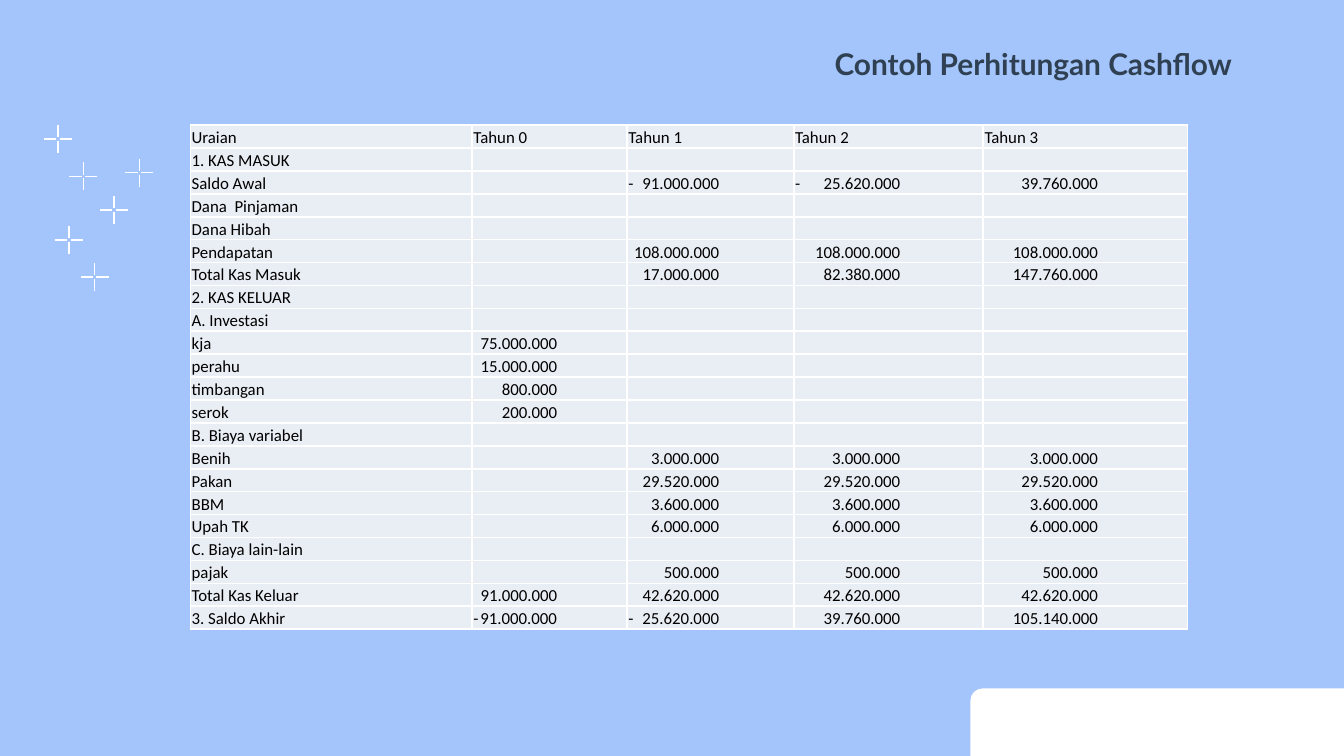
from lxml.etree import SubElement
from pptx import Presentation
from pptx.dml.color import RGBColor
from pptx.enum.text import MSO_ANCHOR as Anchor, PP_ALIGN as Align
from pptx.oxml.ns import qn
from pptx.util import Pt

COLORS = {"sky": "A4C5FB", "white": "FFFFFF", "title": "2F4052",
          "cell": "E9EDF4", "text": "000000"}

# Content
TITLE = "Contoh Perhitungan Cashflow"
HEADINGS = ("Uraian", "Tahun 0", "Tahun 1", "Tahun 2", "Tahun 3")
# A tab splits the minus sign at the left from the amount at the right.
CASHFLOW = [
    ("1. KAS MASUK", "", "", "", ""),
    ("Saldo Awal", "", "-\t91.000.000", "-\t25.620.000", "39.760.000"),
    ("Dana  Pinjaman", "", "", "", ""),
    ("Dana Hibah", "", "", "", ""),
    ("Pendapatan", "", "108.000.000", "108.000.000", "108.000.000"),
    ("Total Kas Masuk", "", "17.000.000", "82.380.000", "147.760.000"),
    ("2. KAS KELUAR", "", "", "", ""),
    ("A. Investasi", "", "", "", ""),
    ("kja", "75.000.000", "", "", ""),
    ("perahu", "15.000.000", "", "", ""),
    ("timbangan", "800.000", "", "", ""),
    ("serok", "200.000", "", "", ""),
    ("B. Biaya variabel", "", "", "", ""),
    ("Benih", "", "3.000.000", "3.000.000", "3.000.000"),
    ("Pakan", "", "29.520.000", "29.520.000", "29.520.000"),
    ("BBM", "", "3.600.000", "3.600.000", "3.600.000"),
    ("Upah TK", "", "6.000.000", "6.000.000", "6.000.000"),
    ("C. Biaya lain-lain", "", "", "", ""),
    ("pajak", "", "500.000", "500.000", "500.000"),
    ("Total Kas Keluar", "91.000.000", "42.620.000", "42.620.000", "42.620.000"),
    ("3. Saldo Akhir", "-\t91.000.000", "-\t25.620.000", "39.760.000", "105.140.000"),
]

# Layout, in points
SLIDE_W, SLIDE_H = 720, 405
TABLE_LEFT, TABLE_TOP, ROW_H = 102, 67, 12.3
COLUMN_WIDTHS = (151, 83, 89.3, 101.5, 109.4)
AMOUNT_GAPS = (0, 37.5, 40, 44.5, 48)  # space right of the amounts
CELL_INSET = 0.7
SPARKLES = [(29.5, 121), (43.2, 141), (67.2, 85), (53.5, 105), (23.5, 67), (37.2, 87)]
SPARKLE_SIZE, SPARKLE_ARM = 15, 6.5
PANEL_EDGE = [(720, 368.8), (526.5, 368.8), (524, 369.3), (521.8, 370.7),
              (520.4, 372.8), (519.9, 375.2), (519.9, 405), (720, 405)]


def color(name):
    return RGBColor.from_string(COLORS[name])


def points(pairs):
    return [(Pt(x), Pt(y)) for x, y in pairs]


def style(paragraph, font_name, size, color_name, bold=False):
    for run in paragraph.runs:
        run.font.name, run.font.size, run.font.bold = font_name, Pt(size), bold
        run.font.color.rgb = color(color_name)


def add_sparkle(left, top):
    middle, far = SPARKLE_SIZE / 2, SPARKLE_SIZE - SPARKLE_ARM
    spans = [(0, SPARKLE_ARM), (far, SPARKLE_SIZE)]
    arms = [((middle, a), (middle, b)) for a, b in spans]
    arms += [((a, middle), (b, middle)) for a, b in spans]
    arms = [points((left + x, top + y) for x, y in arm) for arm in arms]
    builder = slide.shapes.build_freeform(*arms[0][0])
    for start, end in arms:
        builder.move_to(*start)
        builder.add_line_segments([end], close=False)
    sparkle = builder.convert_to_shape()
    sparkle.shadow.inherit = False
    sparkle.fill.background()
    sparkle.line.color.rgb = color("white")
    sparkle.line.width = Pt(0.85)


def add_borders(cell):
    for side in ("a:lnL", "a:lnR", "a:lnT", "a:lnB"):
        border = SubElement(cell._tc.get_or_add_tcPr(), qn(side), w=str(Pt(1)))
        fill = SubElement(border, qn("a:solidFill"))
        SubElement(fill, qn("a:srgbClr"), val=COLORS["white"])


def fill_cell(cell, text, column, is_amount):
    add_borders(cell)
    cell.fill.solid()
    cell.fill.fore_color.rgb = color("cell")
    cell.vertical_anchor = Anchor.BOTTOM
    cell.margin_left = cell.margin_right = cell.margin_top = Pt(CELL_INSET)
    cell.margin_bottom = 0
    paragraph = cell.text_frame.paragraphs[0]
    if not text:
        SubElement(paragraph._p, qn("a:endParaRPr"), sz="900")
        return
    paragraph.text = text
    if "\t" in text:
        stop = COLUMN_WIDTHS[column] - AMOUNT_GAPS[column] - CELL_INSET
        tabs = SubElement(paragraph._p.get_or_add_pPr(), qn("a:tabLst"))
        SubElement(tabs, qn("a:tab"), pos=str(Pt(stop)), algn="r")
    elif is_amount:
        paragraph.alignment = Align.RIGHT
        cell.margin_right = Pt(AMOUNT_GAPS[column])
    style(paragraph, "Calibri", 9, "text")


prs = Presentation()
prs.slide_width, prs.slide_height = Pt(SLIDE_W), Pt(SLIDE_H)
slide = prs.slides.add_slide(prs.slide_layouts[6])

# Background, sparkles and corner panel
slide.background.fill.solid()
slide.background.fill.fore_color.rgb = color("sky")
for left, top in SPARKLES:
    add_sparkle(left, top)

edge = points(PANEL_EDGE)
outline = slide.shapes.build_freeform(*edge[0])
outline.add_line_segments(edge[1:], close=True)
panel = outline.convert_to_shape()
panel.shadow.inherit = False
panel.fill.solid()
panel.fill.fore_color.rgb = color("white")
panel.line.fill.background()

# Title
title = slide.shapes.add_textbox(Pt(447.1), Pt(22.3), Pt(217), Pt(21)).text_frame
title.word_wrap = True
title.margin_left = title.margin_right = title.margin_bottom = 0
title.margin_top = Pt(2)
title.text = TITLE
style(title.paragraphs[0], "Lato", 16, "title", bold=True)

# Cashflow table
rows = [HEADINGS] + CASHFLOW
table = slide.shapes.add_table(
    len(rows), len(HEADINGS), Pt(TABLE_LEFT), Pt(TABLE_TOP),
    Pt(sum(COLUMN_WIDTHS)), Pt(ROW_H * len(rows))).table
table.first_row = table.horz_banding = False
for column, width in enumerate(COLUMN_WIDTHS):
    table.columns[column].width = Pt(width)
for r, row in enumerate(rows):
    table.rows[r].height = Pt(ROW_H)
    for column, text in enumerate(row):
        fill_cell(table.cell(r, column), text, column, r > 0 and column > 0)

prs.save("out.pptx")
